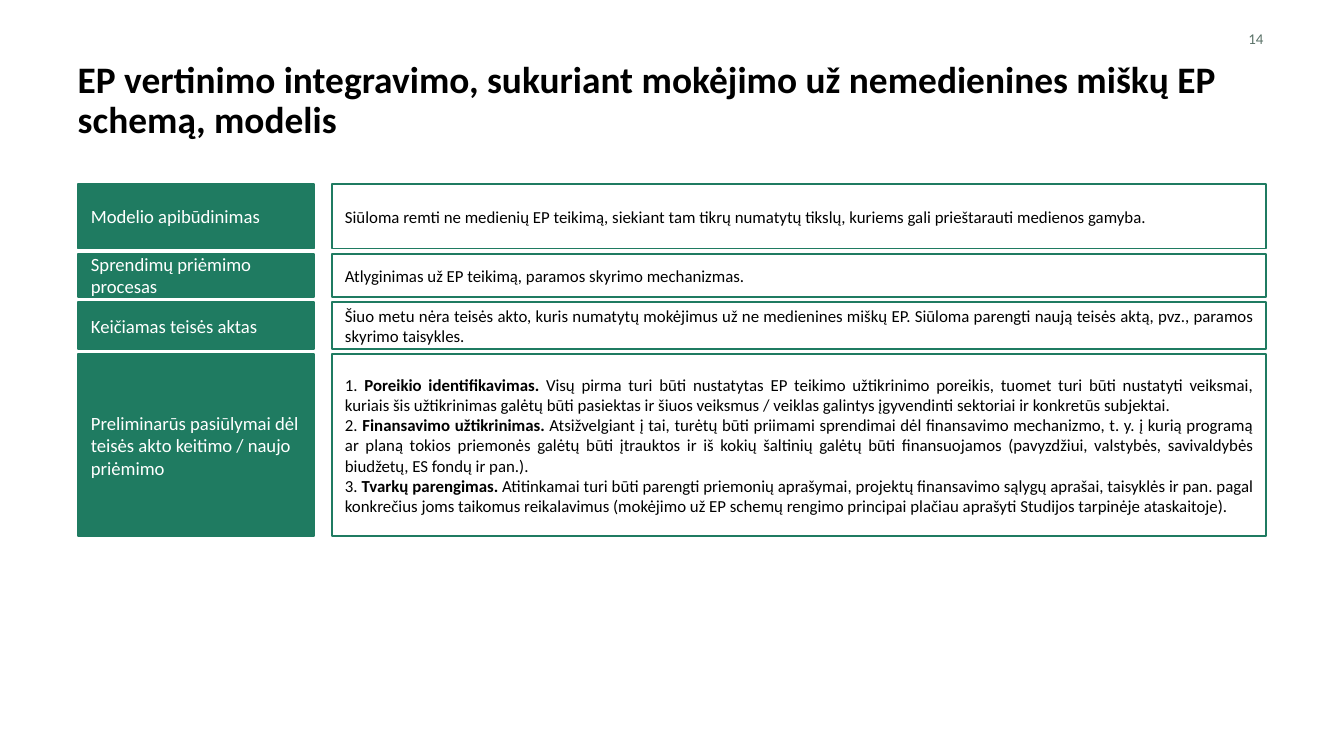
from pptx import Presentation
from pptx.dml.color import RGBColor
from pptx.enum.shapes import MSO_SHAPE
from pptx.enum.text import MSO_ANCHOR, PP_ALIGN
from pptx.util import Cm, Pt

# Content: a paragraph is a list of (text, bold) runs
TITLE = "EP vertinimo integravimo, sukuriant mokėjimo už nemedienines miškų EP schemą, modelis"
PAGE = "14"
ROWS = [  # label, row height in cm, paragraphs
    ("Modelio apibūdinimas", 1.22, [
        [("Siūloma remti ne medienių EP teikimą, siekiant tam tikrų numatytų tikslų, "
          "kuriems gali prieštarauti medienos gamyba.", False)]]),
    ("Sprendimų priėmimo procesas", 0.81, [
        [("Atlyginimas už EP teikimą, paramos skyrimo mechanizmas.", False)]]),
    ("Keičiamas teisės aktas", 0.89, [
        [("Šiuo metu nėra teisės akto, kuris numatytų mokėjimus už ne medienines miškų EP. "
          "Siūloma parengti naują teisės aktą, pvz., paramos skyrimo taisykles.", False)]]),
    ("Preliminarūs pasiūlymai dėl teisės akto keitimo / naujo priėmimo", 3.43, [
        [("1. ", False), ("Poreikio identifikavimas. ", True),
         ("Visų pirma turi būti nustatytas EP teikimo užtikrinimo poreikis, tuomet turi būti "
          "nustatyti veiksmai, kuriais šis užtikrinimas galėtų būti pasiektas ir šiuos veiksmus / "
          "veiklas galintys įgyvendinti sektoriai ir konkretūs subjektai.", False)],
        [("2. ", False), ("Finansavimo užtikrinimas. ", True),
         ("Atsižvelgiant į tai, turėtų būti priimami sprendimai dėl finansavimo mechanizmo, t. y. "
          "į kurią programą ar planą tokios priemonės galėtų būti įtrauktos ir iš kokių šaltinių "
          "galėtų būti finansuojamos (pavyzdžiui, valstybės, savivaldybės biudžetų, ES fondų ir "
          "pan.).", False)],
        [("3. ", False), ("Tvarkų parengimas. ", True),
         ("Atitinkamai turi būti parengti priemonių aprašymai, projektų finansavimo sąlygų "
          "aprašai, taisyklės ir pan. pagal konkrečius joms taikomus reikalavimus (mokėjimo už EP "
          "schemų rengimo principai plačiau aprašyti Studijos tarpinėje ataskaitoje).", False)]]),
]

# Layout in cm
LEFT, LABEL_W = 1.47, 4.47
BODY_LEFT, BODY_W = 6.27, 17.65
TOP, GAP = 3.48, 0.1
GREEN, GREY, BLACK, WHITE = "1F7B61", "5A7268", "000000", "FFFFFF"


def rgb(value):
    return RGBColor.from_string(value)


def write(tf, paragraphs, size, color, align, anchor=MSO_ANCHOR.MIDDLE):
    tf.word_wrap = True
    tf.vertical_anchor = anchor
    for i, runs in enumerate(paragraphs):
        p = tf.add_paragraph() if i else tf.paragraphs[0]
        p.alignment = align
        for text, bold in runs:
            r = p.add_run()
            r.text = text
            r.font.name = "Calibri"
            r.font.size = Pt(size)
            r.font.bold = bold
            r.font.color.rgb = rgb(color)


def add_text(s, box, *style):
    tf = s.shapes.add_textbox(*map(Cm, box)).text_frame
    tf.margin_left = tf.margin_right = tf.margin_top = tf.margin_bottom = 0
    write(tf, *style)
    return tf


def add_box(s, box, fill, *style):
    sp = s.shapes.add_shape(MSO_SHAPE.RECTANGLE, *map(Cm, box))
    sp.shadow.inherit = False
    if fill:
        sp.fill.solid()
        sp.fill.fore_color.rgb = rgb(fill)
    else:
        sp.fill.background()
    sp.line.color.rgb = rgb(GREEN)
    sp.line.width = Pt(1)
    write(sp.text_frame, *style)


prs = Presentation()
prs.slide_width, prs.slide_height = Cm(25.4), Cm(14.29)
s = prs.slides.add_slide(prs.slide_layouts[6])

# Title and page number
tf = add_text(s, (LEFT, 1.15, 22.4, 1.55), [[(TITLE, True)]], 20, BLACK,
              PP_ALIGN.LEFT, MSO_ANCHOR.TOP)
tf.paragraphs[0].line_spacing = 0.9
add_text(s, (18.16, 0.57, 5.72, 0.33), [[(PAGE, False)]], 8, GREY, PP_ALIGN.RIGHT)

# Rows: green label and outlined description
top = TOP
for label, height, paragraphs in ROWS:
    add_box(s, (LEFT, top, LABEL_W, height), GREEN,
            [[(label, False)]], 10, WHITE, PP_ALIGN.LEFT)
    add_box(s, (BODY_LEFT, top, BODY_W, height), None,
            paragraphs, 9, BLACK, PP_ALIGN.JUSTIFY)
    top += height + GAP

prs.save("out.pptx")
